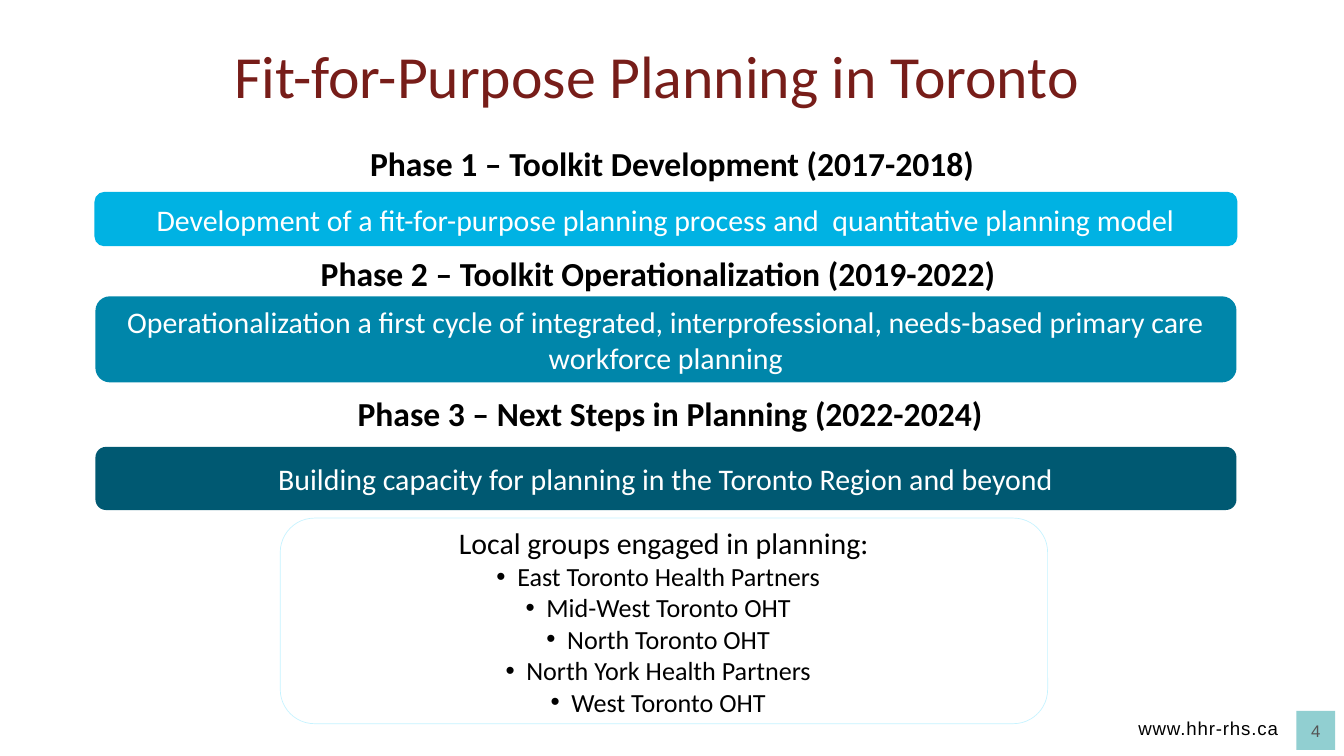
"""Build the slide on the three phases of fit-for-purpose planning in Toronto."""
from lxml import etree
from pptx import Presentation
from pptx.dml.color import RGBColor
from pptx.enum.shapes import MSO_SHAPE as Shape
from pptx.enum.text import MSO_ANCHOR as Anchor, PP_ALIGN as Align
from pptx.oxml.ns import qn
from pptx.util import Inches, Pt

COLORS = {
    "title": "771D19", "text": "000000", "white": "FFFFFF", "number": "545454",
    "tab": "91CFD1", "outline": "C6F3FF",
    "phase1": "00B2E3", "phase2": "0086AA", "phase3": "005972",
}


def add_panel(preset, left, top, width, height, fill, line=None, weight=0):
    panel = slide.shapes.add_shape(
        preset, Inches(left), Inches(top), Inches(width), Inches(height))
    panel.shadow.inherit = False
    panel.fill.solid()
    panel.fill.fore_color.rgb = RGBColor.from_string(COLORS[fill])
    if line:
        panel.line.color.rgb = RGBColor.from_string(COLORS[line])
        panel.line.width = Pt(weight)
    else:
        panel.line.fill.background()
    return panel


def set_text(box, text, size, color, font="Calibri", align=Align.CENTER,
             bold=False, anchor=Anchor.TOP, insets=(0.07, 0.04)):
    frame = box.text_frame
    frame.word_wrap = True
    frame.vertical_anchor = anchor
    frame.margin_left = frame.margin_right = Inches(insets[0])
    frame.margin_top = frame.margin_bottom = Inches(insets[1])
    frame.text = text
    for paragraph in frame.paragraphs:
        paragraph.alignment = align
        for run in paragraph.runs:
            run.font.size = Pt(size)
            run.font.name = font
            run.font.bold = bold
            run.font.color.rgb = RGBColor.from_string(COLORS[color])
    return frame.paragraphs


prs = Presentation()
prs.slide_width = Inches(20)
prs.slide_height = Inches(11.25)
slide = prs.slides.add_slide(prs.slide_layouts[6])

title = slide.shapes.add_textbox(Inches(1.79), Inches(0.83), Inches(15.96), Inches(0.82))
title_line = set_text(title, "Fit-for-Purpose Planning in Toronto", 64, "title", insets=(0, 0))[0]
title_line.line_spacing = Pt(58.2)

website = slide.shapes.add_textbox(Inches(15.03), Inches(10.77), Inches(3.99), Inches(0.24))
website_line = set_text(website, "www.hhr-rhs.ca", 20, "text", "Arial", Align.RIGHT, insets=(0, 0))[0]
website_line.line_spacing = Pt(17)
website_line.runs[0].font._element.set("spc", "90")

add_panel(Shape.RECTANGLE, 19.29, 10.58, 0.58, 0.58, "tab")
page_number = slide.shapes.add_textbox(Inches(19.33), Inches(10.67), Inches(0.5), Inches(0.4))
set_text(page_number, "4", 18, "number", "Arial", anchor=Anchor.MIDDLE, insets=(0.1, 0.05))

groups = [
    "Local groups engaged in planning:",
    "East Toronto Health Partners",
    "Mid-West Toronto OHT",
    "North Toronto OHT",
    "North York Health Partners",
    "West Toronto OHT",
]
groups_panel = add_panel(Shape.ROUNDED_RECTANGLE, 4.17, 7.71, 11.42, 3.06, "white", "outline", 0.75)
group_lines = set_text(groups_panel, "\n".join(groups), 32, "text",
                       anchor=Anchor.MIDDLE, insets=(0.1, 0.05))
for group_line in group_lines[1:]:
    group_line.level = 1
    properties = group_line._p.get_or_add_pPr()
    properties.set("marL", "0")
    properties.set("indent", str(-Inches(0.31)))
    etree.SubElement(properties, qn("a:buFont")).set("typeface", "Arial")
    etree.SubElement(properties, qn("a:buChar")).set("char", "•")
    group_line.runs[0].font.size = Pt(28)

phases = [
    ("Phase 1 – Toolkit Development (2017-2018)", (5.27, 2.09, 9.47, 0.66),
     "Development of a fit-for-purpose planning process and  quantitative planning model",
     2.87, 0.78, "phase1", "phase1"),
    ("Phase 2 – Toolkit Operationalization (2019-2022)", (4.17, 3.72, 11.25, 0.34),
     "Operationalization a first cycle of integrated, interprofessional, "
     "needs-based primary care workforce planning",
     4.41, 1.28, "phase2", None),
    ("Phase 3 – Next Steps in Planning (2022-2024)", (4.75, 5.81, 10.45, 0.61),
     "Building capacity for planning in the Toronto Region and beyond",
     6.65, 0.94, "phase3", None),
]
for heading, place, goal, top, height, fill, line in phases:
    phase_heading = slide.shapes.add_textbox(*map(Inches, place))
    set_text(phase_heading, heading, 36, "text", bold=True)
    phase_bar = add_panel(Shape.ROUNDED_RECTANGLE, 1.42, top, 16.98, height, fill, line, 2)
    set_text(phase_bar, goal, 32, "white", anchor=Anchor.MIDDLE)

prs.save("out.pptx")
